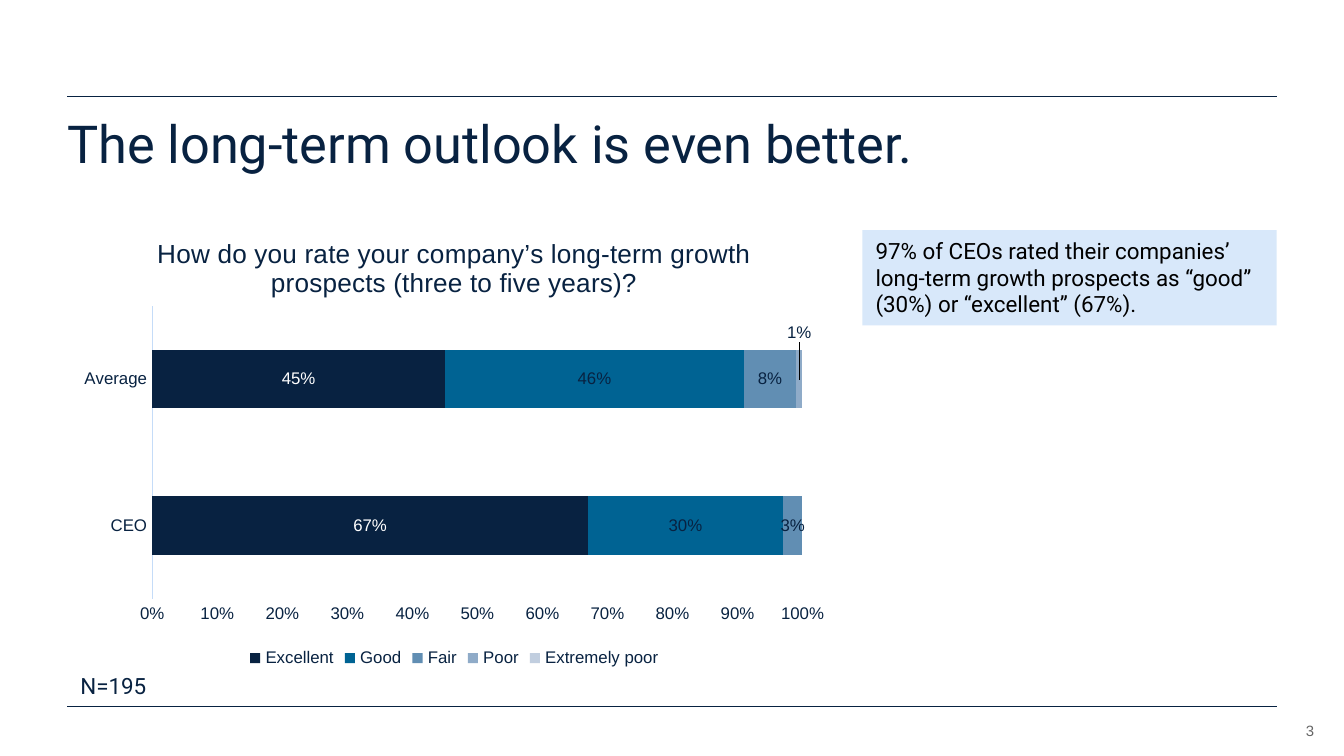
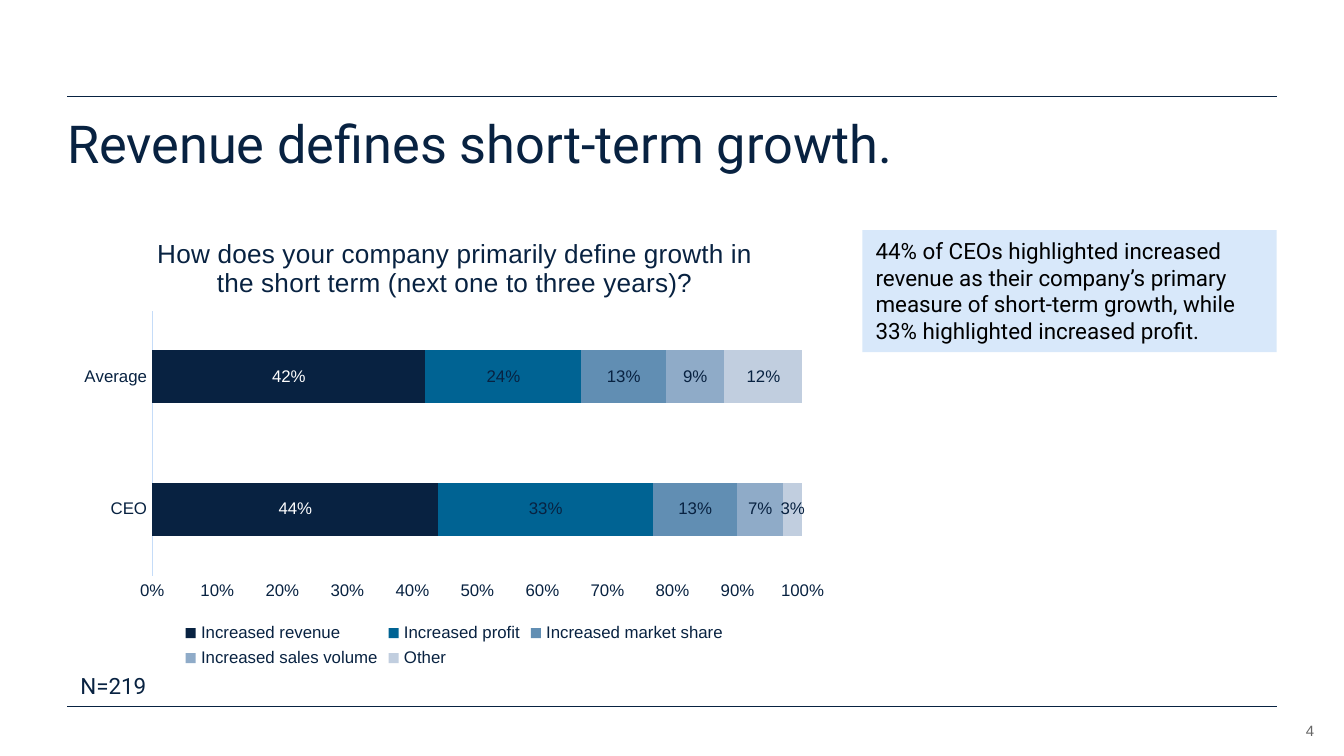
from dataclasses import dataclass

from lxml import etree
from pptx import Presentation
from pptx.chart.chart import Chart
from pptx.chart.data import CategoryChartData
from pptx.dml.color import RGBColor
from pptx.enum import chart as chart_enum
from pptx.enum import shapes, text
from pptx.oxml import parse_xml
from pptx.oxml.ns import nsdecls, qn
from pptx.slide import Slide
from pptx.util import Pt

NAVY, BLACK, WHITE, GREY = "082241", "000000", "FFFFFF", "666666"
CALLOUT_FILL, AXIS_LINE = "D8E8FA", "C5DCF8"
SERIES_COLOURS = (NAVY, "006393", "618EB3", "8FABC8", "C1CEDF")
TEXT_FONT, CHART_FONT = "Roboto", "Arial"
LEFT, RIGHT = 36, 684
RULE_TOPS = (51.75, 378.75)
FIRST_NUMBER = 3
CATEGORIES = ("CEO", "Average")


@dataclass(frozen=True)
class Answer:
    name: str
    ceo: float | None
    average: float | None
    raised_label: int | None = None  # category whose label sits above its bar


@dataclass(frozen=True)
class SurveySlide:
    title: str
    question: str
    callout: str
    callout_height: float
    sample: str
    plot_top: float
    plot_height: float
    answers: tuple[Answer, ...]


SURVEY_SLIDES = (
    SurveySlide(
        "The long-term outlook is even better.",
        "How do you rate your company’s long-term growth prospects (three to five years)?",
        "97% of CEOs rated their companies’ long-term growth prospects as “good” (30%) "
        "or “excellent” (67%).",
        51, "N=195", 0.21, 0.63,
        (
            Answer("Excellent", 0.67, 0.45),
            Answer("Good", 0.3, 0.46),
            Answer("Fair", 0.03, 0.08),
            Answer("Poor", None, 0.01, raised_label=1),
            Answer("Extremely poor", None, None),
        ),
    ),
    SurveySlide(
        "Revenue defines short-term growth.",
        "How does your company primarily define growth in the short term "
        "(next one to three years)?",
        "44% of CEOs highlighted increased revenue as their company’s primary measure of "
        "short-term growth, while 33% highlighted increased profit.",
        65.4, "N=219", 0.22, 0.57,
        (
            Answer("Increased revenue", 0.44, 0.42),
            Answer("Increased profit", 0.33, 0.24),
            Answer("Increased market share", 0.13, 0.13),
            Answer("Increased sales volume", 0.07, 0.09),
            Answer("Other", 0.03, 0.12),
        ),
    ),
)


def colour(value: str) -> RGBColor:
    return RGBColor.from_string(value)


def style_font(font, name: str, size: float, value: str) -> None:
    font.name, font.size, font.bold = name, Pt(size), False
    font.color.rgb = colour(value)


def clear_insets(frame) -> None:
    frame.margin_left = frame.margin_right = frame.margin_top = frame.margin_bottom = 0


def place(shape, left: float, top: float, width: float, height: float) -> None:
    shape.left, shape.top = Pt(left), Pt(top)
    shape.width, shape.height = Pt(width), Pt(height)


def add_rules(slide: Slide) -> None:
    for top in RULE_TOPS:
        rule = slide.shapes.add_connector(
            shapes.MSO_CONNECTOR.STRAIGHT, Pt(LEFT), Pt(top), Pt(RIGHT), Pt(top))
        rule.line.color.rgb = colour(NAVY)
        rule.line.width = Pt(0.5)
        etree.SubElement(rule._element.spPr, qn("a:effectLst"))


def add_slide_number(slide: Slide, number: int) -> None:
    box = slide.shapes.add_textbox(Pt(670.3), Pt(383), Pt(33.8), Pt(13))
    frame = box.text_frame
    clear_insets(frame)
    frame.word_wrap = True
    frame.vertical_anchor = text.MSO_ANCHOR.BOTTOM
    paragraph = frame.paragraphs[0]
    paragraph.text = str(number)
    paragraph.alignment = text.PP_ALIGN.RIGHT
    run = paragraph.runs[0]
    style_font(run.font, CHART_FONT, 8, GREY)
    field = etree.Element(
        qn("a:fld"), id="{B6F15528-21DE-4FAA-801E-634DDDAF4B2B}", type="slidenum")
    run._r.addprevious(field)
    field.extend(list(run._r))
    paragraph._p.remove(run._r)


def set_title(slide: Slide, words: str) -> None:
    title = slide.shapes.title
    place(title, LEFT, 63.4, RIGHT - LEFT, 39.6)
    frame = title.text_frame
    frame.text = words
    frame.word_wrap = True
    frame.auto_size = text.MSO_AUTO_SIZE.NONE
    frame.vertical_anchor = text.MSO_ANCHOR.TOP
    clear_insets(frame)
    paragraph = frame.paragraphs[0]
    paragraph.alignment = text.PP_ALIGN.LEFT
    paragraph.line_spacing = 0.9
    style_font(paragraph.runs[0].font, TEXT_FONT, 28, NAVY)


def fill_body_text(shape, words: str, value: str) -> None:
    frame = shape.text_frame
    frame.text = words
    frame.word_wrap = True
    frame.auto_size = text.MSO_AUTO_SIZE.SHAPE_TO_FIT_TEXT
    frame.vertical_anchor = text.MSO_ANCHOR.TOP
    paragraph = frame.paragraphs[0]
    paragraph.alignment = text.PP_ALIGN.LEFT
    style_font(paragraph.runs[0].font, TEXT_FONT, 12, value)


def add_callout(slide: Slide, words: str, height: float) -> None:
    callout = slide.shapes.add_shape(
        shapes.MSO_SHAPE.RECTANGLE, Pt(462), Pt(123.3), Pt(222), Pt(height))
    callout.shadow.inherit = False
    callout.fill.solid()
    callout.fill.fore_color.rgb = colour(CALLOUT_FILL)
    callout.line.fill.background()
    fill_body_text(callout, words, BLACK)


def set_layout(holder, index: int, inner: bool = False, **fractions: float) -> None:
    """Give a chart part a manual layout, as fractions of the chart's size."""
    previous = holder.find(qn("c:layout"))
    if previous is not None:
        index = holder.index(previous)
        holder.remove(previous)
    layout = parse_xml(f"<c:layout {nsdecls('c')}><c:manualLayout/></c:layout>")
    settings = [("layoutTarget", "inner")] if inner else []
    if holder.tag != qn("c:dLbl"):
        settings += [("xMode", "edge"), ("yMode", "edge")]
    settings += fractions.items()
    for name, value in settings:
        etree.SubElement(layout[0], qn(f"c:{name}"), val=str(value))
    holder.insert(index, layout)


def style_axes(chart: Chart) -> None:
    for axis in (chart.category_axis, chart.value_axis):
        axis.major_tick_mark = axis.minor_tick_mark = chart_enum.XL_TICK_MARK.NONE
        axis.has_major_gridlines = False
        style_font(axis.tick_labels.font, CHART_FONT, 9, NAVY)
    chart.category_axis.format.line.color.rgb = colour(AXIS_LINE)
    chart.category_axis.format.line.width = Pt(0.75)
    values = chart.value_axis
    values.format.line.fill.background()
    values.minimum_scale, values.maximum_scale, values.major_unit = 0, 1, 0.1
    values.tick_labels.number_format = "0%"
    values.tick_labels.number_format_is_linked = False


def style_series(series, answer: Answer, fill: str) -> None:
    series.format.fill.solid()
    series.format.fill.fore_color.rgb = colour(fill)
    series.invert_if_negative = False
    labels = series.data_labels
    labels.show_value = True
    labels.position = chart_enum.XL_LABEL_POSITION.CENTER
    labels.number_format = "0%"
    labels.number_format_is_linked = False
    style_font(labels.font, CHART_FONT, 9, WHITE if fill == NAVY else NAVY)
    if answer.raised_label is not None:
        label = series.points[answer.raised_label].data_label
        style_font(label.font, CHART_FONT, 9, NAVY)
        label.position = chart_enum.XL_LABEL_POSITION.CENTER
        set_layout(labels._element.find(qn("c:dLbl")), 1, x=0, y=-0.1)


def add_survey_chart(slide: Slide, survey: SurveySlide) -> None:
    data = CategoryChartData(number_format="0%")
    data.categories = CATEGORIES
    for answer in survey.answers:
        data.add_series(answer.name, (answer.ceo, answer.average))
    chart = slide.shapes.add_chart(
        chart_enum.XL_CHART_TYPE.BAR_STACKED_100,
        Pt(LEFT), Pt(111.6), Pt(414.7), Pt(249.1), data).chart
    style_font(chart.font, CHART_FONT, 10, NAVY)

    chart.has_title = True
    frame = chart.chart_title.text_frame
    frame.text = survey.question
    style_font(frame.paragraphs[0].runs[0].font, CHART_FONT, 14, NAVY)
    set_layout(chart.chart_title._element, 1, x=0.11, y=0.05)
    set_layout(chart._chartSpace.chart.plotArea, 0, inner=True,
               x=0.11, y=survey.plot_top, w=0.84, h=survey.plot_height)

    chart.has_legend = True
    chart.legend.position = chart_enum.XL_LEGEND_POSITION.BOTTOM
    chart.legend.include_in_layout = False
    style_font(chart.legend.font, CHART_FONT, 9, NAVY)

    style_axes(chart)
    plot = chart.plots[0]
    plot.gap_width, plot.overlap = 150, 100
    plot.vary_by_categories = False
    for series, answer, fill in zip(plot.series, survey.answers, SERIES_COLOURS):
        style_series(series, answer, fill)


def build_slide(presentation, survey: SurveySlide, number: int) -> None:
    slide = presentation.slides.add_slide(presentation.slide_layouts[5])
    add_rules(slide)
    add_slide_number(slide, number)
    set_title(slide, survey.title)
    add_callout(slide, survey.callout, survey.callout_height)
    add_survey_chart(slide, survey)
    sample = slide.shapes.add_textbox(Pt(LEFT), Pt(356.4), Pt(69), Pt(21.6))
    fill_body_text(sample, survey.sample, NAVY)


def main() -> None:
    presentation = Presentation()
    presentation.slide_width, presentation.slide_height = Pt(720), Pt(405)
    presentation.element.set("firstSlideNum", str(FIRST_NUMBER))
    for number, survey in enumerate(SURVEY_SLIDES, FIRST_NUMBER):
        build_slide(presentation, survey, number)
    presentation.save("out.pptx")


if __name__ == "__main__":
    main()
